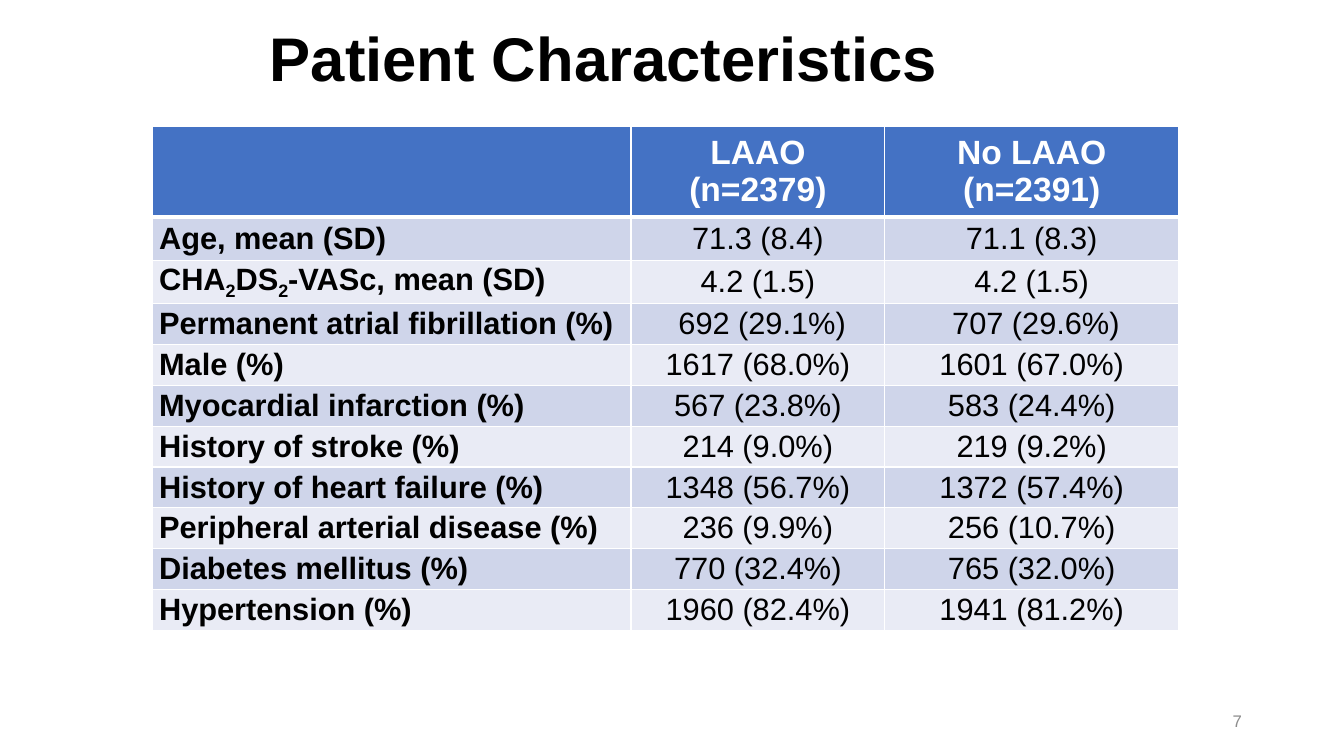
"""Build the patient characteristics slide with its table of two groups."""
from dataclasses import dataclass

from lxml.etree import SubElement
from pptx import Presentation
from pptx.dml.color import RGBColor
from pptx.enum.text import MSO_ANCHOR, PP_ALIGN
from pptx.oxml.ns import qn
from pptx.util import Cm, Pt


@dataclass(frozen=True)
class Theme:
    font: str = "Arial"
    black: str = "000000"
    white: str = "FFFFFF"
    gray: str = "8C8C8C"
    head: str = "4472C4"
    bands: tuple = ("CFD5EA", "E9EBF5")
    title: int = 44
    top: int = 24
    body: int = 22
    foot: int = 12


look = Theme()


def add_run(para, text, size, color, bold=False, sub=False):
    run = para.add_run()
    run.text = text
    run.font.name = look.font
    run.font.size = Pt(size)
    run.font.bold = bold
    run.font.color.rgb = RGBColor.from_string(color)
    if sub:
        run._r.get_or_add_rPr().set("baseline", "-25000")


def add_edge(cell, side, width):
    props = cell._tc.get_or_add_tcPr()
    line = SubElement(props, qn(f"a:ln{side}"), w=str(Pt(width)))
    fill = SubElement(line, qn("a:solidFill"))
    SubElement(fill, qn("a:srgbClr"), val=look.white)


deck = Presentation()
deck.slide_width = Cm(33.87)
deck.slide_height = Cm(19.05)
slide = deck.slides.add_slide(deck.slide_layouts[6])

labels = [
    ("Patient Characteristics", (6.55, -0.05, 20.75, 3.18),
     PP_ALIGN.LEFT, look.title, look.black, True),
    ("7", (23.93, 17.65, 7.62, 1.02),
     PP_ALIGN.RIGHT, look.foot, look.gray, False),
]
for text, place, align, size, color, bold in labels:
    box = slide.shapes.add_textbox(*map(Cm, place))
    frame = box.text_frame
    frame.word_wrap = True
    frame.vertical_anchor = MSO_ANCHOR.MIDDLE
    para = frame.paragraphs[0]
    para.alignment = align
    para.line_spacing = 0.9 if bold else 1.0
    add_run(para, text, size, color, bold)

rows = [
    ("", "LAAO (n=2379)", "No LAAO (n=2391)"),
    ("Age, mean (SD)", "71.3 (8.4)", "71.1 (8.3)"),
    ("CHA|2|DS|2|-VASc, mean (SD)", "4.2 (1.5)", "4.2 (1.5)"),
    ("Permanent atrial fibrillation (%)", " 692 (29.1%)", " 707 (29.6%)"),
    ("Male (%)", "1617 (68.0%)", "1601 (67.0%)"),
    ("Myocardial infarction (%)", "567 (23.8%)", "583 (24.4%)"),
    ("History of stroke (%)", "214 (9.0%)", "219 (9.2%)"),
    ("History of heart failure (%)", "1348 (56.7%)", "1372 (57.4%)"),
    ("Peripheral arterial disease (%)", "236 (9.9%)", "256 (10.7%)"),
    ("Diabetes mellitus (%)", "770 (32.4%)", "765 (32.0%)"),
    ("Hypertension (%)", "1960 (82.4%)", "1941 (81.2%)"),
]
widths = [12.06, 6.4, 7.4]
heights = [2.12, 1.09, 1.09] + [1.03] * 8

table = slide.shapes.add_table(
    len(rows), len(widths), Cm(3.84), Cm(3.18),
    Cm(sum(widths)), Cm(sum(heights))).table
for col, width in zip(table.columns, widths):
    col.width = Cm(width)

for r, (row, height) in enumerate(zip(rows, heights)):
    table.rows[r].height = Cm(height)
    top = r == 0
    for c, text in enumerate(row):
        cell = table.cell(r, c)
        cell.vertical_anchor = MSO_ANCHOR.MIDDLE
        if not top:
            cell.margin_left = cell.margin_right = Cm(0.17)
            cell.margin_top = cell.margin_bottom = Cm(0)
        for side in "LRTB":
            thick = (r, side) in [(0, "B"), (1, "T")]
            add_edge(cell, side, 3 if thick else 1)
        cell.fill.solid()
        shade = look.head if top else look.bands[(r - 1) % 2]
        cell.fill.fore_color.rgb = RGBColor.from_string(shade)
        para = cell.text_frame.paragraphs[0]
        para.alignment = PP_ALIGN.CENTER if c else PP_ALIGN.LEFT
        if text:
            for i, part in enumerate(text.split("|")):
                add_run(para, part, look.top if top else look.body,
                        look.white if top else look.black,
                        top or c == 0, i % 2 == 1)

deck.save("out.pptx")
